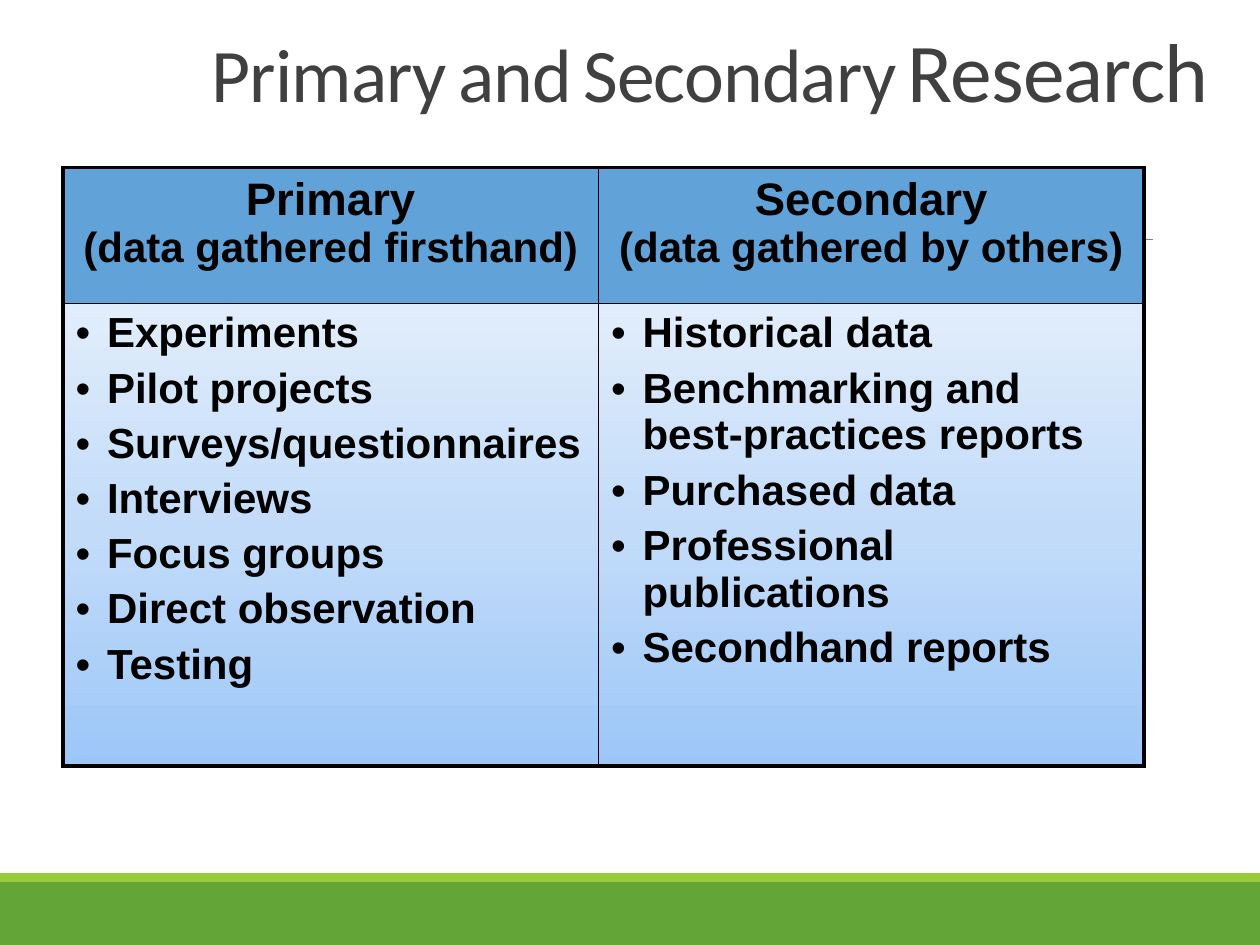
import pptx
import pptx.dml.color
import pptx.enum.shapes
import pptx.enum.text
import pptx.oxml
import pptx.oxml.ns
import pptx.util
from pptx.util import Inches

RGBColor = pptx.dml.color.RGBColor
BLACK = RGBColor(0x00, 0x00, 0x00)
TITLE_GRAY = RGBColor(0x40, 0x40, 0x40)
RULE_GRAY = RGBColor(0x80, 0x80, 0x80)
GREEN = RGBColor(0x63, 0xA5, 0x37)
LIME = RGBColor(0x99, 0xCB, 0x38)
HEADER_BLUE = RGBColor(0x61, 0xA2, 0xD8)
BODY_GRADIENT = [
    (0, RGBColor(0x9C, 0xC7, 0xF7)),
    (50, RGBColor(0xC2, 0xDB, 0xF9)),
    (100, RGBColor(0xE1, 0xED, 0xFB)),
]

TITLE_WORDS = [("Primary", 43.2), ("and", 43.2), ("Secondary", 43.2), ("Research", 47.7)]
HEADERS = [
    ("Primary", "(data gathered firsthand)"),
    ("Secondary", "(data gathered by others)"),
]
METHODS = [
    ["Experiments", "Pilot projects", "Surveys/questionnaires", "Interviews",
     "Focus groups", "Direct observation", "Testing"],
    ["Historical data", "Benchmarking and best-practices reports", "Purchased data",
     "Professional publications", "Secondhand reports"],
]
COLUMN_WIDTHS = [4.25, 4.33]
ROW_HEIGHTS = [1.08, 3.67]
OUTER_BORDER, INNER_BORDER = 2.25, 1


def add_xml(parent, xml):
    """Append a DrawingML fragment to an element."""
    root = f"<a:root {pptx.oxml.ns.nsdecls('a')}>{xml}</a:root>"
    parent.append(pptx.oxml.parse_xml(root)[0])


def format_run(run, name, size, color, bold):
    """Set the font of a run."""
    run.font.name = name
    run.font.size = pptx.util.Pt(size)
    run.font.color.rgb = color
    run.font.bold = bold


def add_band(slide, left, top, width, height, color):
    """Add a plain filled rectangle."""
    band = slide.shapes.add_shape(
        pptx.enum.shapes.MSO_SHAPE.RECTANGLE, left, top, width, height)
    band.shadow.inherit = False
    band.fill.solid()
    band.fill.fore_color.rgb = color
    band.line.fill.background()


def add_rule(slide, left, top, width):
    """Add the thin horizontal rule behind the table."""
    rule = slide.shapes.add_connector(
        pptx.enum.shapes.MSO_CONNECTOR.STRAIGHT, left, top, left + width, top)
    rule.line.color.rgb = RULE_GRAY
    rule.line.width = pptx.util.Pt(0.5)
    add_xml(rule._element.spPr, "<a:effectLst/>")


def place_title(slide, left, top, width, height):
    """Move the title placeholder and fill it word by word."""
    title = slide.shapes.title
    title.left, title.top, title.width, title.height = left, top, width, height
    frame = title.text_frame
    frame.word_wrap = True
    frame.auto_size = pptx.enum.text.MSO_AUTO_SIZE.NONE
    frame.vertical_anchor = pptx.enum.text.MSO_ANCHOR.BOTTOM
    paragraph = frame.paragraphs[0]
    paragraph.alignment = pptx.enum.text.PP_ALIGN.LEFT
    paragraph.line_spacing = 0.85
    for index, (word, size) in enumerate(TITLE_WORDS):
        if index:
            space = paragraph.add_run()
            space.text = " "
            format_run(space, "Calibri", 28.8, TITLE_GRAY, True)
        run = paragraph.add_run()
        run.text = word
        format_run(run, "Calibri", size, TITLE_GRAY, False)
    for run in paragraph.runs:
        run.font._element.set("spc", "-50")


def set_borders(cell, row, column):
    """Draw thick lines on the table's outside and thin ones within."""
    outside = {"L": column == 0, "R": column == 1, "T": row == 0, "B": row == 1}
    for side, is_outer in outside.items():
        width = pptx.util.Pt(OUTER_BORDER if is_outer else INNER_BORDER)
        add_xml(cell._tc.get_or_add_tcPr(),
                f'<a:ln{side} w="{int(width)}"><a:solidFill><a:srgbClr val="{BLACK}"/>'
                f"</a:solidFill></a:ln{side}>")


def fill_header(cell, lines):
    """Write a two-line centred header on solid blue."""
    cell.fill.solid()
    cell.fill.fore_color.rgb = HEADER_BLUE
    cell.text_frame.text = "\n".join(lines)
    for paragraph, size in zip(cell.text_frame.paragraphs, (26, 24)):
        paragraph.alignment = pptx.enum.text.PP_ALIGN.CENTER
        format_run(paragraph.runs[0], "Arial", size, BLACK, True)


def fill_methods(cell, methods):
    """Write a bulleted list on the blue gradient."""
    stops = "".join(f'<a:gs pos="{position * 1000}"><a:srgbClr val="{color}"/></a:gs>'
                    for position, color in BODY_GRADIENT)
    add_xml(cell._tc.get_or_add_tcPr(),
            f'<a:gradFill><a:gsLst>{stops}</a:gsLst><a:lin ang="16200000"/></a:gradFill>')
    cell.text_frame.text = "\n".join(methods)
    for index, paragraph in enumerate(cell.text_frame.paragraphs):
        properties = paragraph._p.get_or_add_pPr()
        properties.set("marL", str(Inches(0.25)))
        properties.set("indent", str(-Inches(0.25)))
        add_xml(properties, '<a:buFont typeface="Arial"/>')
        add_xml(properties, '<a:buChar char="•"/>')
        if index:
            paragraph.space_before = pptx.util.Pt(4.8)
        format_run(paragraph.runs[0], "Arial", 24, BLACK, True)


def add_research_table(slide, left, top, width, height):
    """Add the table comparing the two kinds of research."""
    table = slide.shapes.add_table(2, 2, left, top, width, height).table
    for column, column_width in zip(table.columns, COLUMN_WIDTHS):
        column.width = Inches(column_width)
    for row, row_height in zip(table.rows, ROW_HEIGHTS):
        row.height = Inches(row_height)
    for row, (fill_cell, contents) in enumerate(
            [(fill_header, HEADERS), (fill_methods, METHODS)]):
        for column, content in enumerate(contents):
            cell = table.cell(row, column)
            set_borders(cell, row, column)
            fill_cell(cell, content)
    table.cell(1, 0).margin_right = Inches(0.05)


def main():
    """Build and save the slide."""
    presentation = pptx.Presentation()
    presentation.slide_width = Inches(10)
    presentation.slide_height = Inches(7.5)
    slide = presentation.slides.add_slide(presentation.slide_layouts[5])
    add_band(slide, 0, Inches(7), Inches(10), Inches(0.5), GREEN)
    add_band(slide, 0, Inches(6.93), Inches(10), Inches(0.07), LIME)
    add_rule(slide, Inches(0.98), Inches(1.9), Inches(8.17))
    place_title(slide, Inches(1.58), 0, Inches(8.17), Inches(1))
    add_research_table(slide, Inches(0.5), Inches(1.33), Inches(8.58), Inches(4.75))
    presentation.save("out.pptx")


if __name__ == "__main__":
    main()
